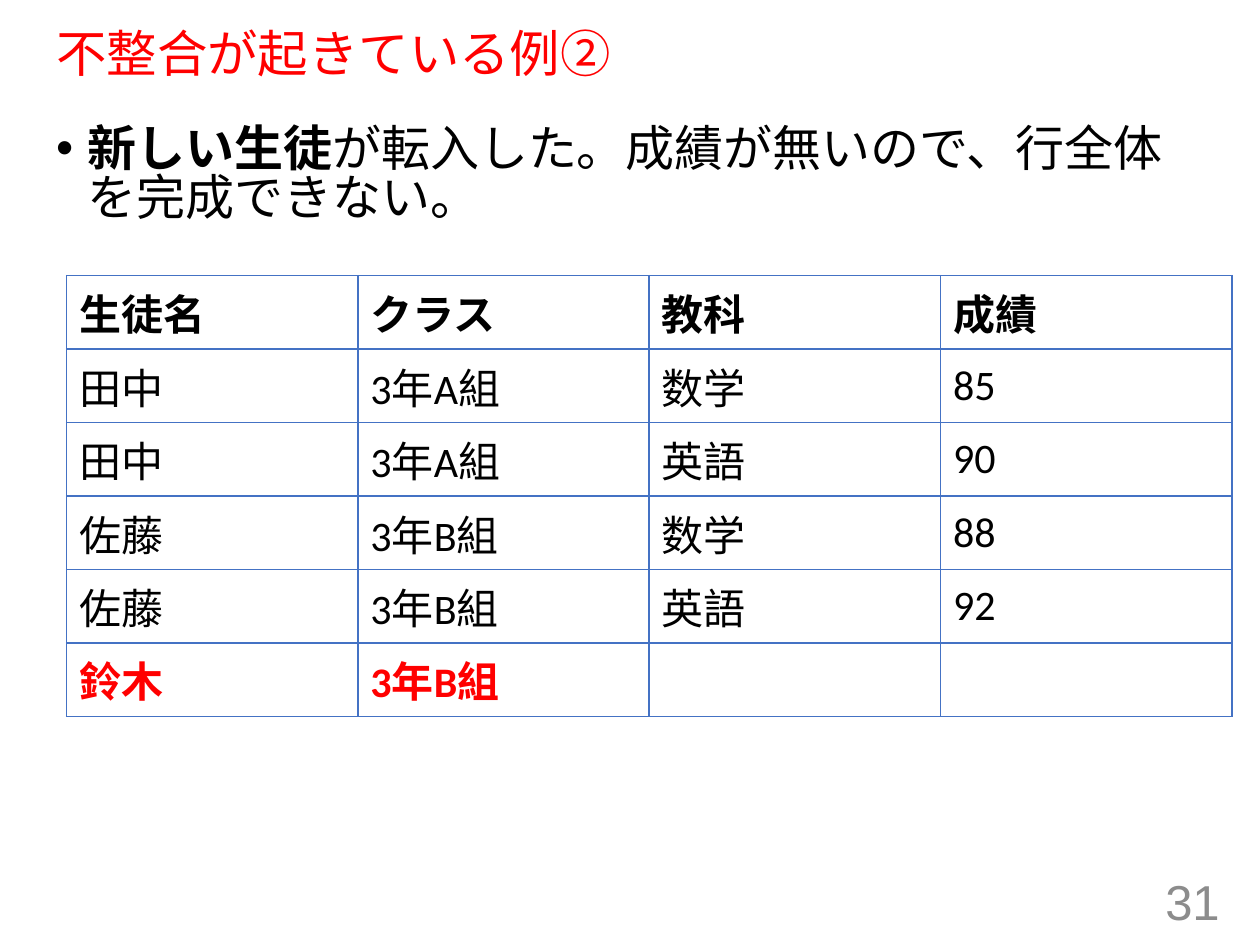
from lxml.etree import SubElement
from pptx import Presentation
from pptx.dml.color import RGBColor
from pptx.enum.text import MSO_ANCHOR, MSO_AUTO_SIZE, PP_ALIGN
from pptx.oxml.ns import qn
from pptx.util import Pt

BLACK, RED, GRAY, BLUE = "000000", "FF0000", "8C8C8C", "4472C4"


def add_text(paragraph, text, size=28, font="Arial", color=BLACK, bold=False):
    run = paragraph.add_run()
    run.text = text
    run.font.size = Pt(size)
    run.font.name = font
    run.font.bold = bold
    run.font.color.rgb = RGBColor.from_string(color)


def set_borders(cell, color, width):
    properties = cell._tc.get_or_add_tcPr()
    for side in ("lnL", "lnR", "lnT", "lnB"):
        line = SubElement(properties, qn(f"a:{side}"), w=str(Pt(width)))
        fill = SubElement(line, qn("a:solidFill"))
        SubElement(fill, qn("a:srgbClr"), val=color)


presentation = Presentation()
presentation.slide_width = Pt(720)
presentation.slide_height = Pt(540)
slide = presentation.slides.add_slide(presentation.slide_layouts[5])

# Title
title = slide.shapes.title
title.left, title.top, title.width, title.height = Pt(25), Pt(13.5), Pt(666), Pt(37)
title.text_frame.auto_size = MSO_AUTO_SIZE.NONE
title.text_frame.vertical_anchor = MSO_ANCHOR.MIDDLE
paragraph = title.text_frame.paragraphs[0]
paragraph.alignment = PP_ALIGN.LEFT
paragraph.line_spacing = 0.9
add_text(paragraph, "不整合が起きている例②", size=28.8, color=RED)

# Bulleted statement
statement = slide.shapes.add_textbox(Pt(25), Pt(67), Pt(666), Pt(95))
statement.text_frame.word_wrap = True
statement.text_frame.margin_top = Pt(6)
paragraph = statement.text_frame.paragraphs[0]
paragraph.line_spacing = 0.83
properties = paragraph._p.get_or_add_pPr()
properties.set("marL", str(Pt(18)))
properties.set("indent", str(Pt(-18)))
SubElement(properties, qn("a:buFont"), typeface="Arial")
SubElement(properties, qn("a:buChar"), char="•")
add_text(paragraph, "新しい生徒", bold=True)
add_text(paragraph, "が転入した。成績が無いので、行全体を完成できない。")

# Grades table: bold header, and the incomplete last row in red
rows = [
    ("生徒名", "クラス", "教科", "成績"),
    ("田中", "3年A組", "数学", "85"),
    ("田中", "3年A組", "英語", "90"),
    ("佐藤", "3年B組", "数学", "88"),
    ("佐藤", "3年B組", "英語", "92"),
    ("鈴木", "3年B組", "", ""),
]
last = len(rows) - 1
table = slide.shapes.add_table(
    len(rows), len(rows[0]), Pt(38), Pt(157.5), Pt(666), Pt(42 * len(rows))
).table
table.first_row = False
table.horz_banding = False
for row_index, row in enumerate(rows):
    for column_index, text in enumerate(row):
        cell = table.cell(row_index, column_index)
        cell.vertical_anchor = MSO_ANCHOR.MIDDLE
        set_borders(cell, BLUE, 1)
        cell.fill.background()
        if text:
            add_text(
                cell.text_frame.paragraphs[0], text, size=24, font="Calibri",
                color=RED if row_index == last else BLACK,
                bold=row_index in (0, last),
            )

# Page number
page_number = slide.shapes.add_textbox(Pt(542), Pt(500.5), Pt(162), Pt(29))
page_number.text_frame.word_wrap = True
page_number.text_frame.vertical_anchor = MSO_ANCHOR.MIDDLE
paragraph = page_number.text_frame.paragraphs[0]
paragraph.alignment = PP_ALIGN.RIGHT
add_text(paragraph, "31", color=GRAY)

presentation.save("out.pptx")
